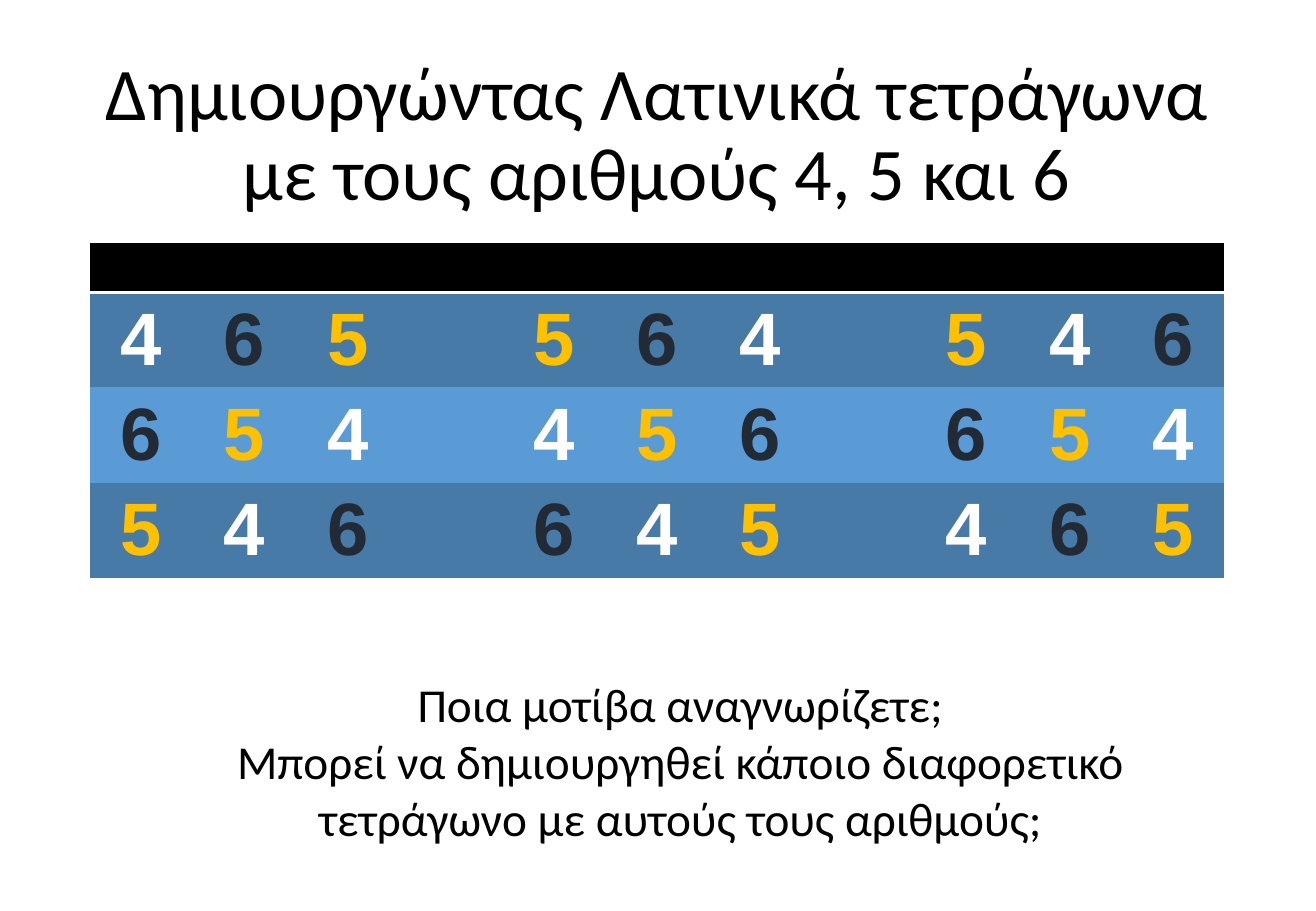
from lxml import etree
from pptx import Presentation
from pptx.dml.color import RGBColor
from pptx.enum.text import MSO_ANCHOR, MSO_AUTO_SIZE, PP_ALIGN
from pptx.oxml import parse_xml
from pptx.oxml.ns import nsdecls, qn
from pptx.util import Cm, Pt

CENTER = PP_ALIGN.CENTER
MIDDLE = MSO_ANCHOR.MIDDLE
NO_AUTOFIT = MSO_AUTO_SIZE.NONE
TITLE_ONLY = 5
NO_GRID_STYLE = "{2D5ABB26-0587-4C30-8999-92F81FD0307C}"

SQUARE_ROWS = ["465 564 546", "654 456 654", "546 645 465"]
DIGIT_COLORS = {"4": "FFFFFF", "5": "FFC000", "6": "222A35"}
ROW_COLORS = ["487AA8", "5B9BD5"]
QUESTIONS = [
    "Ποια μοτίβα αναγνωρίζετε;",
    "Μπορεί να δημιουργηθεί κάποιο διαφορετικό τετράγωνο με αυτούς τους αριθμούς;",
]


def color(hex_value):
    return RGBColor.from_string(hex_value)


class SlideBuilder:
    """Holds the text style and the current slide, and adds elements to it."""

    text_font = "Calibri"
    digit_font = "Arial"
    text_color = "000000"
    header_color = "000000"
    rule_color = "FFFFFF"

    def __init__(self, presentation):
        self.slide = presentation.slides.add_slide(presentation.slide_layouts[TITLE_ONLY])

    def format_paragraph(self, paragraph, size, font_name, font_color, bold=False):
        paragraph.alignment = CENTER
        paragraph.font.size = Pt(size)
        paragraph.font.name = font_name
        paragraph.font.bold = bold
        paragraph.font.color.rgb = color(font_color)

    def title(self, text, left, top, width, height):
        shape = self.slide.shapes.title
        shape.left, shape.top, shape.width, shape.height = map(Cm, (left, top, width, height))
        frame = shape.text_frame
        frame.text = text
        frame.auto_size = NO_AUTOFIT
        frame.vertical_anchor = MIDDLE
        paragraph = frame.paragraphs[0]
        paragraph.line_spacing = 0.9
        self.format_paragraph(paragraph, 44, self.text_font, self.text_color)

    def text(self, lines, left, top, width, height):
        box = self.slide.shapes.add_textbox(*map(Cm, (left, top, width, height)))
        frame = box.text_frame
        frame.word_wrap = True
        frame.text = "\n".join(lines)
        for paragraph in frame.paragraphs:
            self.format_paragraph(paragraph, 28, self.text_font, self.text_color)

    def fill_cell(self, cell, fill_color):
        cell.fill.solid()
        cell.fill.fore_color.rgb = color(fill_color)

    def bottom_rule(self, cell):
        line = parse_xml(f'<a:lnB {nsdecls("a")} w="{Pt(2)}"/>')
        fill = etree.SubElement(line, qn("a:solidFill"))
        etree.SubElement(fill, qn("a:srgbClr"), val=self.rule_color)
        cell._tc.get_or_add_tcPr().insert(0, line)

    def squares_table(self, rows, left, top, width, header_height, row_height):
        column_count = len(rows[0])
        height = header_height + row_height * len(rows)
        frame = self.slide.shapes.add_table(
            len(rows) + 1, column_count, *map(Cm, (left, top, width, height)))
        table = frame.table
        table._tbl.tblPr.find(qn("a:tableStyleId")).text = NO_GRID_STYLE
        for column in table.columns:
            column.width = Cm(width / column_count)
        table.rows[0].height = Cm(header_height)
        for index in range(column_count):
            header = table.cell(0, index)
            self.fill_cell(header, self.header_color)
            self.bottom_rule(header)
        for row_index, digits in enumerate(rows):
            table.rows[row_index + 1].height = Cm(row_height)
            for column_index, digit in enumerate(digits):
                cell = table.cell(row_index + 1, column_index)
                self.fill_cell(cell, ROW_COLORS[row_index % 2])
                if digit in DIGIT_COLORS:
                    cell.margin_left = cell.margin_right = Cm(0.2)
                    cell.text = digit
                    self.format_paragraph(cell.text_frame.paragraphs[0], 44,
                                          self.digit_font, DIGIT_COLORS[digit], True)


def main():
    presentation = Presentation()
    presentation.slide_width = Cm(27.51)
    presentation.slide_height = Cm(19.05)
    builder = SlideBuilder(presentation)
    builder.title("Δημιουργώντας Λατινικά τετράγωνα με τους αριθμούς 4, 5 και 6",
                  1.88, 1.02, 23.72, 3.68)
    builder.squares_table(SQUARE_ROWS, 1.88, 5.08, 23.72, 1.03, 1.98)
    builder.text(QUESTIONS, 3.5, 14, 21.44, 5.05)
    presentation.save("out.pptx")


if __name__ == "__main__":
    main()
